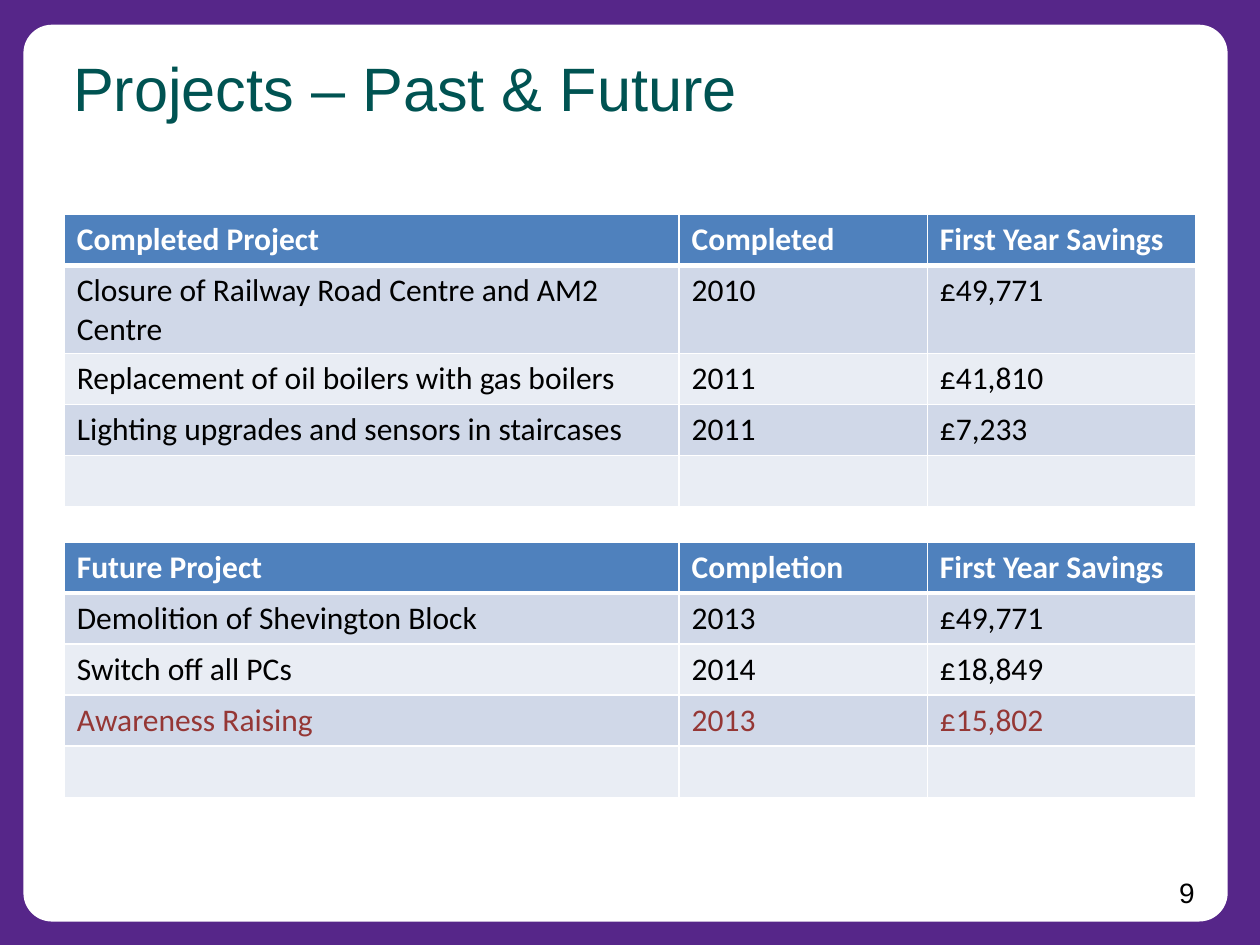
from dataclasses import dataclass

from lxml import etree
from pptx import Presentation
from pptx.dml.color import RGBColor
from pptx.enum.shapes import MSO_SHAPE
from pptx.enum.text import PP_ALIGN
from pptx.oxml.ns import qn
from pptx.util import Inches, Pt

ROUNDED = MSO_SHAPE.ROUNDED_RECTANGLE
LEFT, RIGHT = PP_ALIGN.LEFT, PP_ALIGN.RIGHT

WIDTH, HEIGHT = 10, 7.5
PURPLE, WHITE, BLACK, TEAL = "562689", "FFFFFF", "000000", "005352"
HEADER_FILL, BANDS = "4F81BD", ("D0D8E8", "E9EDF4")
RED = "953735"
TABLE_LEFT, COLUMNS, ROW_HEIGHT = 0.51, (4.88, 1.97, 2.13), Pt(29.2)


@dataclass
class ProjectTable:
    top: float
    rows: list[tuple[str, str, str]]
    highlighted: tuple[int, ...] = ()


TABLES = [
    ProjectTable(1.7, [
        ("Completed Project", "Completed", "First Year Savings"),
        ("Closure of Railway Road Centre and AM2 Centre", "2010", "£49,771"),
        ("Replacement of oil boilers with gas boilers", "2011", "£41,810"),
        ("Lighting upgrades and sensors in staircases", "2011", "£7,233"),
        ("", "", ""),
    ]),
    ProjectTable(4.3, [
        ("Future Project", "Completion", "First Year Savings"),
        ("Demolition of Shevington Block", "2013", "£49,771"),
        ("Switch off all PCs", "2014", "£18,849"),
        ("Awareness Raising", "2013", "£15,802"),
        ("", "", ""),
    ], highlighted=(3,)),
]


def paint(target, color: str) -> None:
    """Give a fill one solid colour."""
    target.solid()
    target.fore_color.rgb = RGBColor.from_string(color)


def write(frame, text: str, *, size: float, color: str, font: str = "Arial",
          bold: bool = False, align=LEFT) -> None:
    para = frame.paragraphs[0]
    para.alignment = align
    para.font.size = Pt(size)
    if not text:
        return
    span = para.add_run()
    span.text = text
    span.font.name, span.font.size, span.font.bold = font, Pt(size), bold
    span.font.color.rgb = RGBColor.from_string(color)


def add_text(page, area: tuple[float, ...], text: str, **style):
    frame = page.shapes.add_textbox(*map(Inches, area)).text_frame
    frame.word_wrap = True
    write(frame, text, **style)
    return frame


def set_borders(cell, bottom: float) -> None:
    """Draw white cell edges; the schema wants them ahead of the fill."""
    properties = cell._tc.get_or_add_tcPr()
    for index, side in enumerate(("lnL", "lnR", "lnT", "lnB")):
        points = bottom if side == "lnB" else 1
        line = etree.Element(qn(f"a:{side}"), w=str(Pt(points)))
        fill = etree.SubElement(line, qn("a:solidFill"))
        etree.SubElement(fill, qn("a:srgbClr"), val=WHITE)
        properties.insert(index, line)


def add_project_table(page, spec: ProjectTable) -> None:
    count = len(spec.rows)
    table = page.shapes.add_table(
        count, len(COLUMNS), Inches(TABLE_LEFT), Inches(spec.top),
        Inches(sum(COLUMNS)), ROW_HEIGHT * count).table
    table.horz_banding = False
    for column, width in zip(table.columns, COLUMNS):
        column.width = Inches(width)
    for number, texts in enumerate(spec.rows):
        header = number == 0
        table.rows[number].height = ROW_HEIGHT
        fill = HEADER_FILL if header else BANDS[(number - 1) % 2]
        color = WHITE if header else RED if number in spec.highlighted else BLACK
        for column, text in enumerate(texts):
            cell = table.cell(number, column)
            paint(cell.fill, fill)
            # The header's thick rule is shared with the row below it
            set_borders(cell, bottom=3 if header else 1)
            if number == 1:
                cell._tc.tcPr.find(qn("a:lnT")).set("w", str(Pt(3)))
            write(cell.text_frame, text, size=18, color=color,
                  font="Calibri", bold=header)


def main() -> None:
    deck = Presentation()
    deck.slide_width, deck.slide_height = Inches(WIDTH), Inches(HEIGHT)
    page = deck.slides.add_slide(deck.slide_layouts[6])

    # Purple frame around a white rounded panel
    paint(page.background.fill, PURPLE)
    panel = page.shapes.add_shape(
        ROUNDED, *map(Inches, (0.2, 0.21, 9.53, 7.09)))
    panel.adjustments[0] = 0.03
    panel.shadow.inherit = False
    paint(panel.fill, WHITE)
    paint(panel.line.fill, WHITE)
    panel.line.width = Pt(2)

    # Page number and title
    add_text(page, (7.3, 6.9, 2.28, 0.37), "9", size=16, color=BLACK, align=RIGHT)
    title = add_text(page, (0.5, 0.3, 6.8, 1.01), "Projects – Past & Future",
                     size=35, color=TEAL)
    title.margin_top, title.margin_left = Inches(0.1), Inches(0.08)

    # Past and future projects
    for spec in TABLES:
        add_project_table(page, spec)

    deck.save("out.pptx")


if __name__ == "__main__":
    main()
